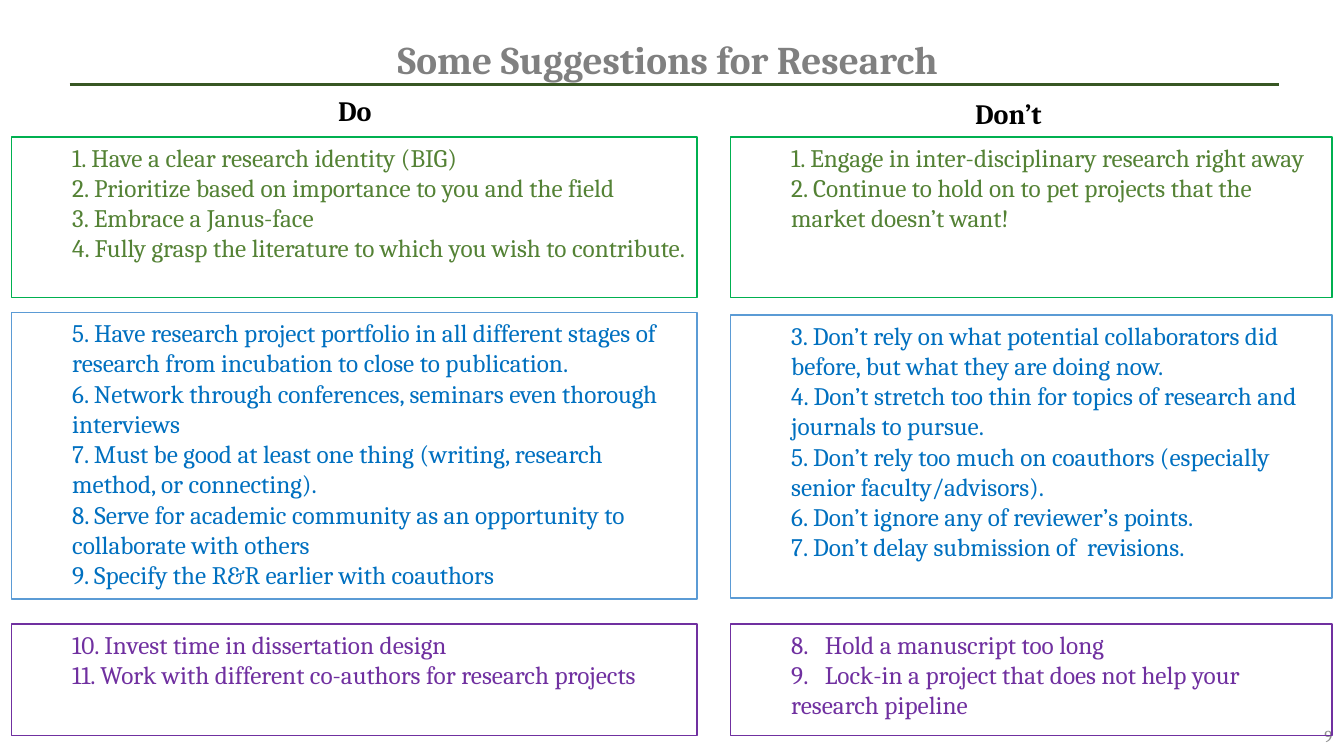
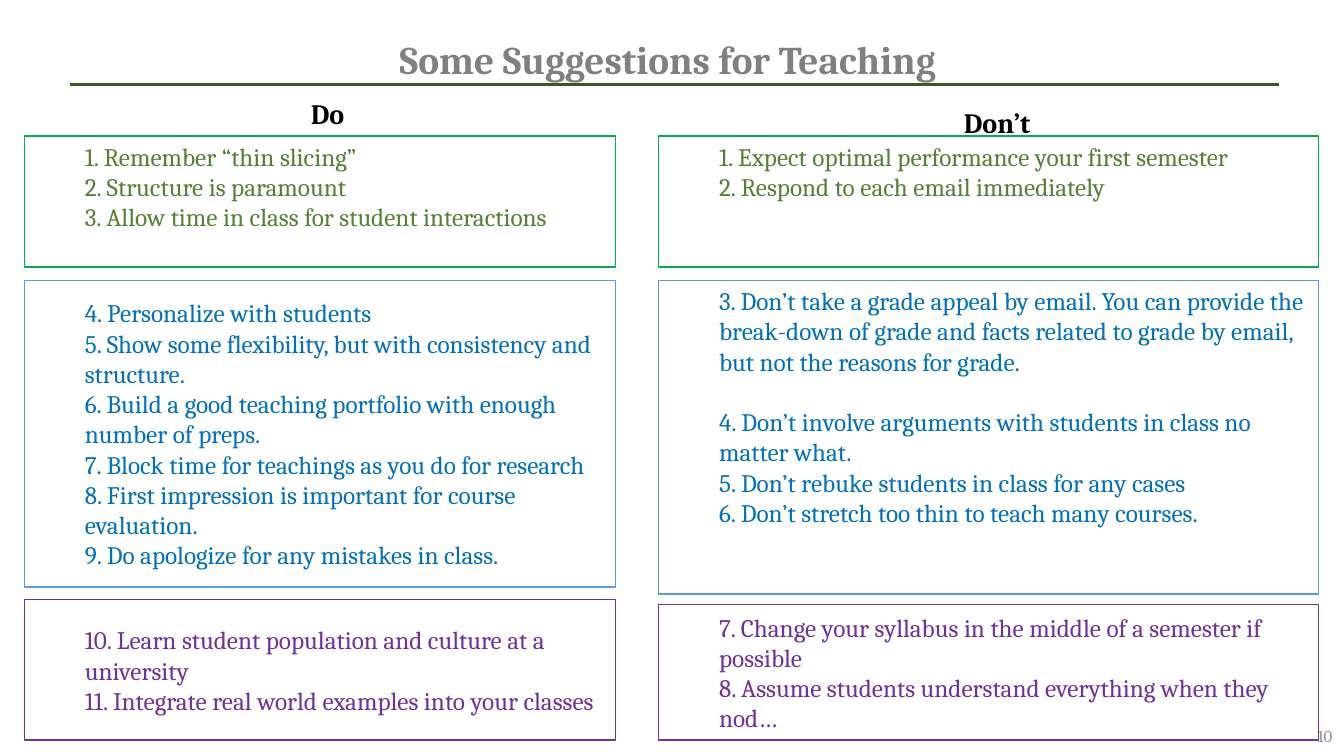
import pptx
import pptx.util
import pptx.dml.color
import pptx.enum.shapes
import pptx.enum.text
import lxml.etree

Pt = pptx.util.Pt
Anchor = pptx.enum.text.MSO_ANCHOR
Align = pptx.enum.text.PP_ALIGN
NS = "{http://schemas.openxmlformats.org/drawingml/2006/main}"


def color(code):
    return pptx.dml.color.RGBColor.from_string(code)


class Deck:
    font = "Cambria"
    title_ink, rule_ink, page_ink = "808080", "385723", "8C8C8C"
    tiers = [("00B050", "548235"), ("5B9BD5", "0070C0"), ("7030A0", "7030A0")]
    cols, rows = 160, 90
    indent = 7.2
    tab = 4

    def __init__(self):
        self.show = pptx.Presentation()
        self.show.slide_width = pptx.util.Inches(13.33)
        self.show.slide_height = pptx.util.Inches(7.5)

    def x(self, n):
        return round(self.show.slide_width * n / self.cols)

    def y(self, n):
        return round(self.show.slide_height * n / self.rows)

    def area(self, left, top, width, height):
        return self.x(left), self.y(top), self.x(width), self.y(height)

    def words(self, para, text, size, ink, bold=False):
        run = para.add_run()
        run.text = text
        run.font.name = self.font
        run.font.size = Pt(size)
        run.font.bold = bold
        run.font.color.rgb = color(ink)

    def label(self, area, text, size, ink, bold=False,
              align=Align.CENTER, anchor=Anchor.TOP, pitch=1.0):
        frame = self.slide.shapes.add_textbox(*self.area(*area)).text_frame
        frame.word_wrap = True
        frame.vertical_anchor = anchor
        para = frame.paragraphs[0]
        para.alignment = align
        para.line_spacing = pitch
        self.words(para, text, size, ink, bold)

    def rule(self, left, right, row):
        kind = pptx.enum.shapes.MSO_CONNECTOR.STRAIGHT
        line = self.slide.shapes.add_connector(
            kind, self.x(left), self.y(row), self.x(right), self.y(row))
        line.line.color.rgb = color(self.rule_ink)
        line.line.width = Pt(2)
        lxml.etree.SubElement(line.element.spPr, NS + "effectLst")

    def page(self, title, number):
        self.slide = self.show.slides.add_slide(self.show.slide_layouts[6])
        self.label((123.8, 85.2, 36, 4.8), str(number), 12, self.page_ink,
                   align=Align.RIGHT, anchor=Anchor.MIDDLE)
        self.label((7.5, 2, 144, 8.4), title, 28, self.title_ink, True,
                   anchor=Anchor.BOTTOM)
        self.rule(8.3, 152.3, 10.1)

    def head(self, area, text):
        self.label(area, text, 20, "000000", True, pitch=0.9)

    def box(self, area, tier, items, anchor, gap):
        edge, ink = self.tiers[tier]
        kind = pptx.enum.shapes.MSO_SHAPE.RECTANGLE
        shape = self.slide.shapes.add_shape(kind, *self.area(*area))
        shape.shadow.inherit = False
        shape.fill.background()
        shape.line.color.rgb = color(edge)
        shape.line.width = Pt(1)
        frame = shape.text_frame
        frame.word_wrap = True
        frame.margin_left = self.x(self.indent)
        frame.vertical_anchor = anchor
        for i, item in enumerate(items):
            para = frame.paragraphs[0] if i == 0 else frame.add_paragraph()
            para.alignment = Align.LEFT
            if i == 0 and gap:
                para.space_after = Pt(gap)
            if "\t" in item:
                stops = lxml.etree.SubElement(
                    para._p.get_or_add_pPr(), NS + "tabLst")
                lxml.etree.SubElement(stops, NS + "tab",
                                      pos=str(self.x(self.tab)), algn="l")
            self.words(para, item, 18, ink)

    def stack(self, left, width, boxes):
        for tier, (top, height, items, *rest) in enumerate(boxes):
            anchor, gap = rest or (Anchor.TOP, 0)
            self.box((left, top, width, height), tier, items, anchor, gap)


def main():
    deck = Deck()
    mid = Anchor.MIDDLE

    deck.page("Some Suggestions for Research", 9)
    deck.head((19.1, 11, 46.3, 4.6), "Do")
    deck.head((92.5, 11.3, 55.1, 4), "Don’t")
    deck.stack(1.4, 81.6, [
        (16.3, 19.1, [
            "1. Have a clear research identity (BIG)",
            "2. Prioritize based on importance to you and the field",
            "3. Embrace a Janus-face",
            "4. Fully grasp the literature to which you wish to contribute."]),
        (37.2, 34.1, [
            "5. Have research project portfolio in all different stages of "
            "research from incubation to close to publication.",
            "6. Network through conferences, seminars even thorough interviews",
            "7. Must be good at least one thing (writing, research method, "
            "or connecting).",
            "8. Serve for academic community as an opportunity to "
            "collaborate with others",
            "9. Specify the R&R earlier with coauthors"]),
        (74.3, 13.3, [
            "10. Invest time in dissertation design",
            "11. Work with different co-authors for research projects"])])
    deck.stack(87, 71.6, [
        (16.3, 19.1, [
            "1. Engage in inter-disciplinary research right away",
            "2. Continue to hold on to pet projects that the market "
            "doesn’t want!"]),
        (37.5, 33.7, [
            "3. Don’t rely on what potential collaborators did before, "
            "but what they are doing now.",
            "4. Don’t stretch too thin for topics of research and journals "
            "to pursue.",
            "5. Don’t rely too much on coauthors (especially senior "
            "faculty/advisors).",
            "6. Don’t ignore any of reviewer’s points.",
            "7. Don’t delay submission of  revisions."]),
        (74.3, 13.3, [
            "8.\tHold a manuscript too long",
            "9.\tLock-in a project that does not help your research "
            "pipeline"])])

    deck.page("Some Suggestions for Teaching", 10)
    deck.head((1.8, 11.4, 74.4, 5.4), "Do")
    deck.head((83.1, 12.4, 71.2, 4), "Don’t")
    deck.stack(2.9, 70.4, [
        (16.2, 15.6, [
            "1. Remember “thin slicing”",
            "2. Structure is paramount",
            "3. Allow time in class for student interactions"]),
        (33.4, 36.5, [
            "4. Personalize with students",
            "5. Show some flexibility, but with consistency and structure.",
            "6. Build a good teaching portfolio with enough number of preps.",
            "7. Block time for teachings as you do for research",
            "8. First impression is important for course evaluation.",
            "9. Do apologize for any mistakes in class."], mid, 0),
        (71.4, 16.7, [
            "10. Learn student population and culture at a university",
            "11. Integrate real world examples into your classes"], mid, 0)])
    deck.stack(78.4, 78.6, [
        (16.2, 15.6, [
            "1. Expect optimal performance your first semester",
            "2. Respond to each email immediately"]),
        (33.4, 37.3, [
            "3. Don’t take a grade appeal by email. You can provide the "
            "break-down of grade and facts related to grade by email, "
            "but not the reasons for grade.",
            "4. Don’t involve arguments with students in class no matter "
            "what.",
            "5. Don’t rebuke students in class for any cases",
            "6. Don’t stretch too thin to teach many courses."],
         Anchor.TOP, 21.6),
        (72, 16.1, [
            "7. Change your syllabus in the middle of a semester if possible",
            "8. Assume students understand everything when they nod…"],
         mid, 0)])

    deck.show.save("out.pptx")


if __name__ == "__main__":
    main()
